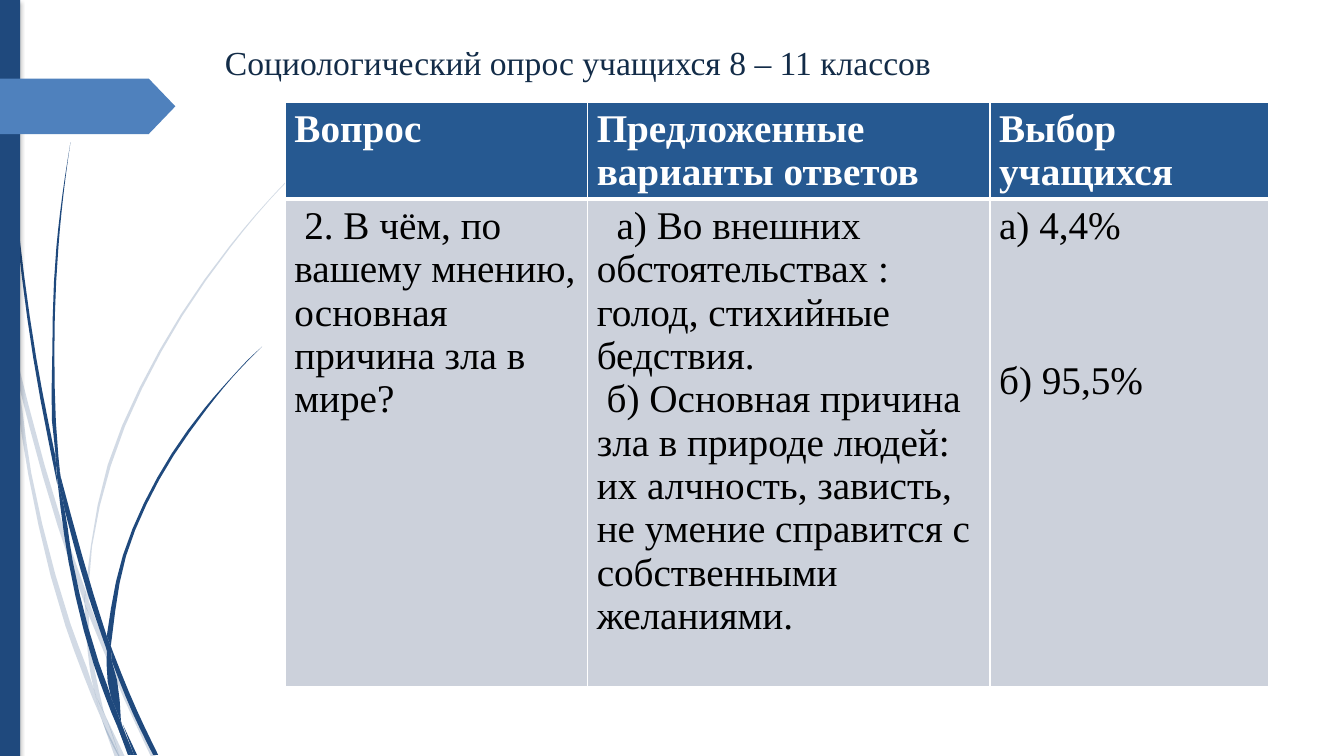
import pptx
import pptx.dml.color
import pptx.enum.shapes
import pptx.oxml
import pptx.oxml.ns
import pptx.util
from dataclasses import dataclass

Cm = pptx.util.Cm
Pt = pptx.util.Pt
SHAPES = pptx.enum.shapes.MSO_SHAPE


@dataclass(frozen=True)
class Theme:
    font: str = "Times New Roman"
    title_size: int = 24
    table_size: int = 28
    title: str = "132C48"
    navy: str = "1F497D"
    arrow: str = "4F81BD"
    header: str = "265991"
    body: str = "CCD1DB"
    white: str = "FFFFFF"
    black: str = "000000"
    faint: int = 20
    thin_border: float = 0.96
    thick_border: float = 3


THEME = Theme()
TITLE = "Социологический опрос учащихся 8 – 11 классов"
HEADERS = ["Вопрос", "Предложенные варианты ответов", "Выбор учащихся"]

# One list per cell: (text, first-line indent in cm, space before in points)
ANSWERS = [
    [("2. В чём, по вашему мнению, основная причина зла в мире?", 0.25, 0)],
    [
        ("а) Во внешних обстоятельствах : голод, стихийные бедствия.", 0.5, 0),
        ("б) Основная причина зла в природе людей: их алчность, зависть, "
         "не умение справится с  собственными желаниями.", 0.25, 0),
    ],
    [("а) 4,4%", 0, 0), ("б) 95,5%", 0, 80)],
]
COLUMN_WIDTHS = [7.62, 10.14, 7.02]
ROW_HEIGHTS = [2.44, 12.27]

# Grass pieces: one edge, then the other edge back, in units of GRASS_UNIT
GRASS_UNIT = Cm(0.0254)
FAINT_GRASS = [
    ([(0, 282), (8, 322), (11, 350)], [(10, 344), (0, 299)]),
    ([(14, 345), (62, 520), (85, 586)], [(84, 599), (57, 521), (17, 376)]),
    ([(88, 596), (92, 607), (127, 691), (155, 751)],
     [(150, 751), (123, 693), (88, 610)]),
    ([(105, 711), (124, 751)], [(119, 751)]),
    ([(11, 350), (17, 376), (31, 469), (70, 619), (93, 683), (99, 707), (101, 714)],
     [(92, 693), (65, 621), (28, 470), (11, 350)]),
    ([(84, 599), (87, 646), (93, 683), (96, 692), (105, 711)],
     [(103, 706), (91, 646), (88, 610), (88, 608)]),
    ([(312, 153), (289, 175), (268, 197), (228, 244), (158, 348), (107, 461), (85, 583)],
     [(88, 596), (88, 583), (110, 462), (160, 349), (229, 245), (268, 198), (290, 175)]),
    ([(101, 714), (114, 751)], [(119, 751)]),
    ([(85, 586), (84, 599), (88, 608)], [(88, 610), (88, 596)]),
    ([(93, 683), (99, 707), (101, 714), (118, 751)],
     [(119, 751), (105, 711), (96, 692)]),
]
DARK_GRASS = [
    ([(3, 0), (4, 48), (7, 110), (17, 233), (33, 355), (57, 481)],
     [(55, 453), (36, 355), (19, 232), (8, 109), (5, 48), (4, 0)]),
    ([(60, 472), (93, 590), (106, 631)], [(106, 645), (88, 592), (64, 505)]),
    ([(110, 641), (113, 649), (136, 705), (157, 749)],
     [(152, 749), (132, 708), (111, 656)]),
    ([(57, 477), (64, 505), (72, 556), (98, 657), (110, 691), (117, 722)],
     [(111, 708), (93, 659), (68, 557), (57, 477)]),
    ([(70, 141), (62, 193), (56, 245), (52, 349), (55, 449), (60, 471)],
     [(60, 472), (58, 453), (54, 349), (58, 245), (63, 193), (70, 141)]),
    ([(122, 719), (136, 749)], [(133, 749)]),
    ([(55, 449), (60, 472), (64, 505)], [(57, 477), (55, 453)]),
    ([(260, 344), (245, 358), (231, 373), (203, 405), (156, 474), (122, 551), (106, 631)],
     [(110, 641), (111, 633), (125, 552), (158, 476), (205, 406), (231, 374), (245, 359)]),
    ([(117, 722), (127, 749)], [(130, 749)]),
    ([(106, 645), (110, 691), (116, 706), (121, 719)],
     [(120, 715), (111, 656), (109, 651)]),
    ([(106, 631), (106, 645), (111, 656)], [(110, 641)]),
    ([(110, 691), (117, 722), (130, 749)], [(133, 749), (121, 719), (116, 706)]),
]


def rgb(code):
    return pptx.dml.color.RGBColor.from_string(code)


def xml(markup):
    declaration = pptx.oxml.ns.nsdecls("a")
    return pptx.oxml.parse_xml(markup.replace(" ", f" {declaration} ", 1))


def paint(shape, color):
    shape.shadow.inherit = False
    shape.fill.solid()
    shape.fill.fore_color.rgb = rgb(color)
    shape.line.fill.background()


def smooth(edge, steps=3):
    """Sample a cubic curve through the edge, with tangents weighted by distance."""
    if len(edge) < 3:
        return edge
    knots = [complex(*point) for point in edge]
    gaps = [abs(b - a) for a, b in zip(knots, knots[1:])]
    slopes = [(b - a) / gap for a, b, gap in zip(knots, knots[1:], gaps)]
    inner = [(s * h + r * g) / (g + h)
             for s, r, g, h in zip(slopes, slopes[1:], gaps, gaps[1:])]
    tangents = [(3 * slopes[0] - inner[0]) / 2, *inner,
                (3 * slopes[-1] - inner[-1]) / 2]
    curve = []
    for a, b, m, n, gap in zip(knots, knots[1:], tangents, tangents[1:], gaps):
        for t in (step / steps for step in range(steps)):
            rise = t * t * (3 - 2 * t)
            bend = t * (1 - t) * ((1 - t) * m - t * n) * gap
            point = a + (b - a) * rise + bend
            curve.append((point.real, point.imag))
    return curve + [edge[-1]]


def add_grass(slide, edge, edge_back, opacity=100):
    outline = [(x * GRASS_UNIT, y * GRASS_UNIT)
               for x, y in smooth(edge) + smooth(edge_back)]
    builder = slide.shapes.build_freeform(*outline[0])
    builder.add_line_segments(outline[1:], close=True)
    grass = builder.convert_to_shape()
    paint(grass, THEME.navy)
    if opacity < 100:
        color = grass.fill._xPr.solidFill[0]
        color.append(xml(f'<a:alpha val="{opacity * 1000}"/>'))


def add_side_decor(slide):
    for edges in FAINT_GRASS:
        add_grass(slide, *edges, opacity=THEME.faint)
    for edges in DARK_GRASS:
        add_grass(slide, *edges)
    bar = slide.shapes.add_shape(SHAPES.RECTANGLE, 0, 0, Cm(0.51), Cm(19.05))
    paint(bar, THEME.navy)
    effects = bar._element.spPr.find(pptx.oxml.ns.qn("a:effectLst"))
    effects.append(xml(
        f'<a:outerShdw blurRad="{Pt(3)}" dist="{Pt(2)}" dir="5400000">'
        f'<a:srgbClr val="{THEME.black}"><a:alpha val="25000"/></a:srgbClr>'
        '</a:outerShdw>'))
    arrow = slide.shapes.add_shape(SHAPES.PENTAGON, 0, Cm(1.98), Cm(4.42), Cm(1.4))
    arrow.adjustments[0] = 0.48
    paint(arrow, THEME.arrow)


def style_paragraph(paragraph, size, color, indent=0, bold=False):
    paragraph._p.get_or_add_pPr().set("indent", str(Cm(indent)))
    for run in paragraph.runs:
        run.font.name = THEME.font
        run.font.size = Pt(size)
        run.font.bold = bold
        run.font.color.rgb = rgb(color)


def fill_cell(cell, paragraphs, is_header):
    thin, thick = THEME.thin_border, THEME.thick_border
    top, bottom = (thin, thick) if is_header else (thick, thin)
    properties = cell._tc.get_or_add_tcPr()
    for side, width in zip("LRTB", (thin, thin, top, bottom)):
        properties.append(xml(
            f'<a:ln{side} w="{Pt(width)}"><a:solidFill>'
            f'<a:srgbClr val="{THEME.white}"/></a:solidFill></a:ln{side}>'))
    cell.fill.solid()
    cell.fill.fore_color.rgb = rgb(THEME.header if is_header else THEME.body)
    cell.margin_left = cell.margin_right = Cm(0.23)
    cell.text_frame.text = "\n".join(text for text, _, _ in paragraphs)
    color = THEME.white if is_header else THEME.black
    for paragraph, (_, indent, before) in zip(cell.text_frame.paragraphs, paragraphs):
        paragraph.space_before = Pt(before)
        style_paragraph(paragraph, THEME.table_size, color, indent, is_header)


def add_survey(slide):
    survey = slide.shapes.add_table(
        len(ROW_HEIGHTS), len(COLUMN_WIDTHS), Cm(7.19), Cm(2.58),
        Cm(sum(COLUMN_WIDTHS)), Cm(sum(ROW_HEIGHTS))).table
    survey.horz_banding = False
    for column, width in zip(survey.columns, COLUMN_WIDTHS):
        column.width = Cm(width)
    for row, height in zip(survey.rows, ROW_HEIGHTS):
        row.height = Cm(height)
    for index, (header, answers) in enumerate(zip(HEADERS, ANSWERS)):
        fill_cell(survey.cell(0, index), [(header, 0, 0)], True)
        fill_cell(survey.cell(1, index), answers, False)


def add_title(slide):
    title = slide.shapes.add_textbox(Cm(1.63), Cm(0.92), Cm(32.24), Cm(2.64))
    title.text_frame.word_wrap = True
    title.text_frame.text = TITLE
    style_paragraph(title.text_frame.paragraphs[0], THEME.title_size, THEME.title, 3.79)


def main():
    deck = pptx.Presentation()
    deck.slide_width, deck.slide_height = Cm(33.87), Cm(19.05)
    slide = deck.slides.add_slide(deck.slide_layouts[6])
    add_side_decor(slide)
    add_survey(slide)
    add_title(slide)
    deck.save("out.pptx")


if __name__ == "__main__":
    main()
